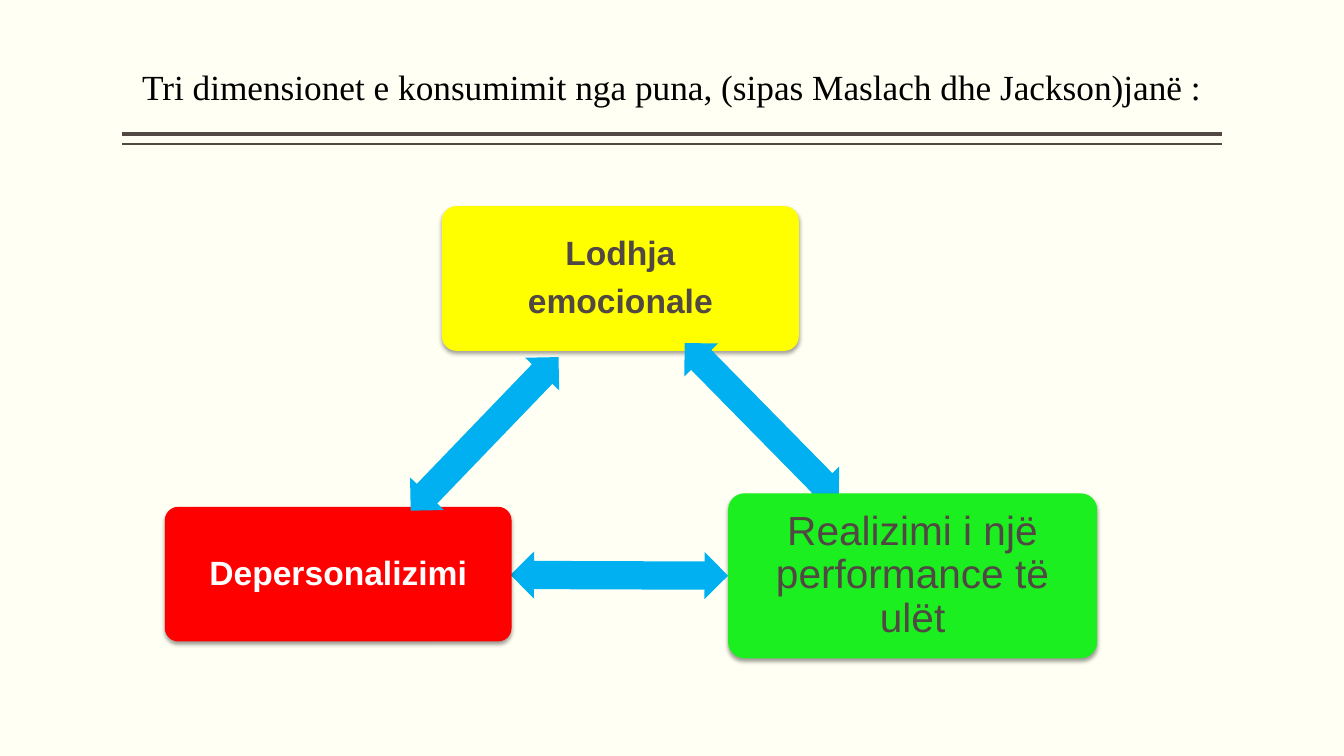
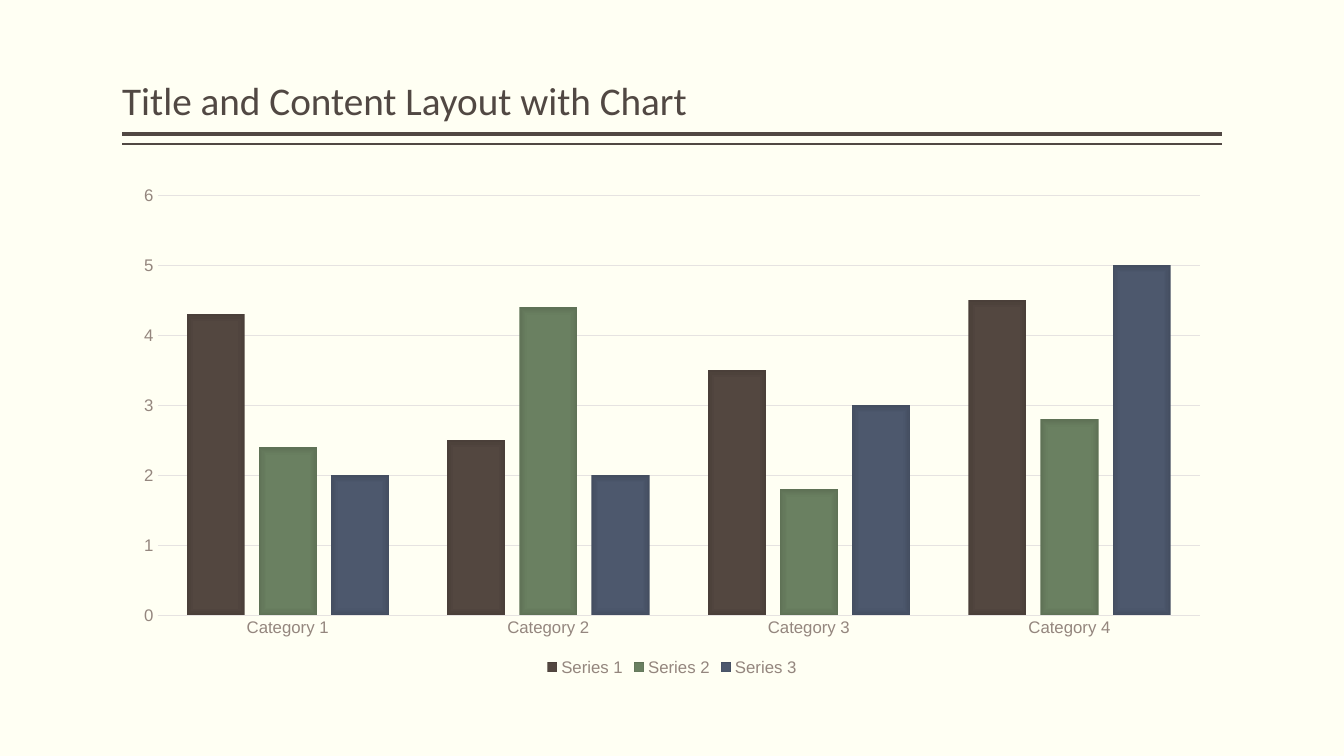
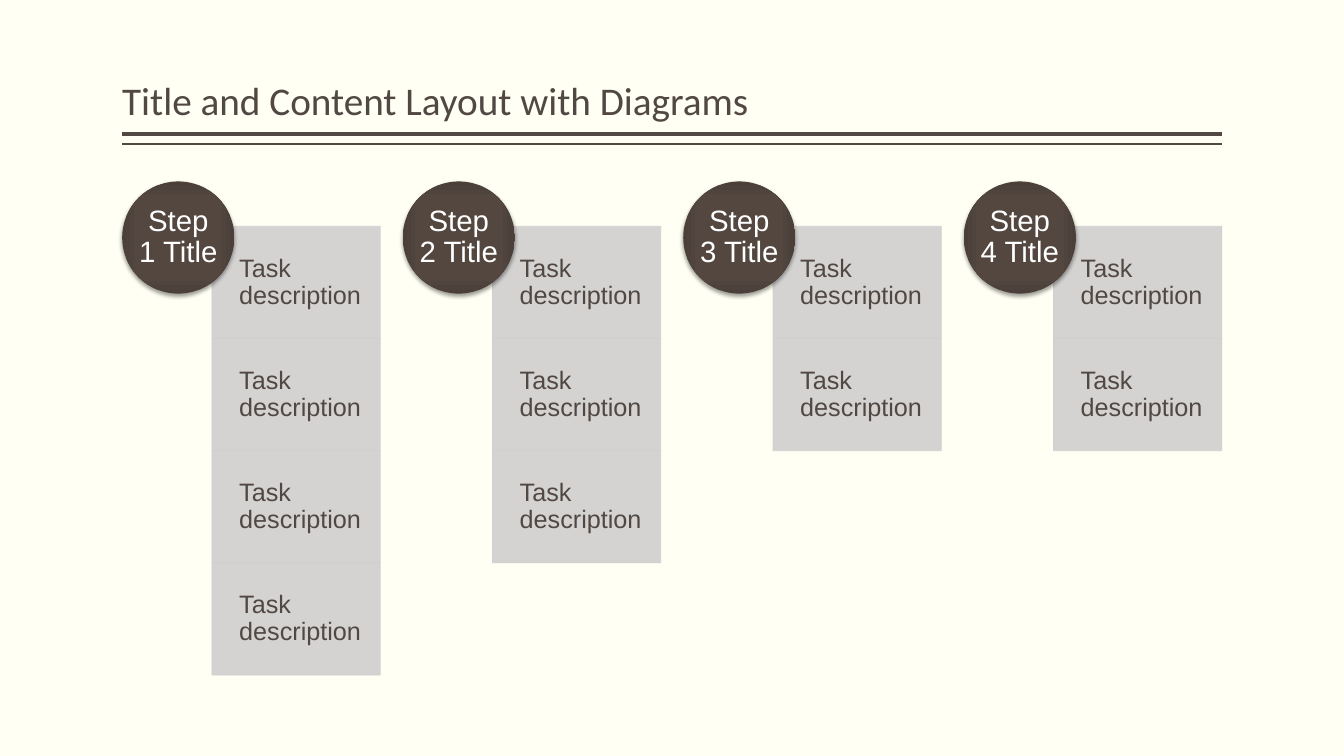
from lxml import etree
from pptx import Presentation, util as u
from pptx.chart.data import CategoryChartData
from pptx.dml.color import RGBColor
from pptx.enum import chart as ch, shapes, text
from pptx.oxml.ns import qn

C = dict(paper="FFFFF3", ink="514843", black="000000", white="FFFFFF",
         yellow="FFFF00", green="1BEF20", red="FF0000", arrow="00B0F0",
         card="D0CFCF", label="94867E", grid="E6E3E1")
C = {name: RGBColor.from_string(value) for name, value in C.items()}
BROWN = ("544740", "534740", "4A3F39")
SAGE = ("6B8162", "6A8061", "5F7256")
NAVY = ("4E596E", "4D586D", "444E61")
W, H = 13.333, 7.5
LEFT, TOP = W / 11, H * 0.24
WIDE = W - 2 * LEFT
UNIT = WIDE / 9.8  # the content grid is 9.8 square cells wide
LEFT_AL, CENTER = text.PP_ALIGN.LEFT, text.PP_ALIGN.CENTER
KIND = shapes.MSO_SHAPE


def shade(fill, element, stops):
    """Fill from the centre to a darker rim."""
    fill.gradient()
    grad = next(element.iter(qn("a:gradFill")))
    for child in list(grad):
        grad.remove(child)
    gs_list = etree.SubElement(grad, qn("a:gsLst"))
    for pos, color in zip((0, 71, 100), stops):
        gs = etree.SubElement(gs_list, qn("a:gs"), pos=str(pos * 1000))
        etree.SubElement(gs, qn("a:srgbClr"), val=color)
    focus = etree.SubElement(grad, qn("a:path"), path="rect")
    etree.SubElement(focus, qn("a:fillToRect"), l="50000", t="50000", r="50000", b="50000")


def add_box(s, kind, cell, fill, lines=(), size=18, color="ink", bold=False,
            align=CENTER, margins=(0, 0, 0, 0), shadow=False):
    """Add a shape at (column, row, columns, rows) of the content grid."""
    x, y, w, h = (u.Inches(n * UNIT) for n in cell)
    sp = s.shapes.add_shape(kind, u.Inches(LEFT) + x, u.Inches(TOP) + y, w, h)
    sp.line.fill.background()
    sp.shadow.inherit = False
    if isinstance(fill, tuple):
        shade(sp.fill, sp.element, fill)
    else:
        sp.fill.solid()
        sp.fill.fore_color.rgb = C[fill]
    if shadow:
        effects = sp.element.spPr.find(qn("a:effectLst"))
        outer = etree.SubElement(effects, qn("a:outerShdw"), blurRad=str(u.Pt(3.1)),
                                 dist=str(u.Pt(2)), dir="5400000", rotWithShape="0")
        tint = etree.SubElement(outer, qn("a:srgbClr"), val="000000")
        etree.SubElement(tint, qn("a:alpha"), val="38000")
    tf = sp.text_frame
    tf.word_wrap = True
    tf.vertical_anchor = text.MSO_ANCHOR.MIDDLE
    tf.margin_left, tf.margin_top, tf.margin_right, tf.margin_bottom = map(u.Inches, margins)
    for i, line in enumerate(lines):
        p = tf.add_paragraph() if i else tf.paragraphs[0]
        p.text = line
        p.alignment, p.line_spacing, p.space_after = align, 0.9, u.Pt(size * 0.35)
        p.font.name, p.font.size, p.font.bold = "Arial", u.Pt(size), bold
        p.font.color.rgb = C[color]
    return sp


prs = Presentation()
prs.slide_width, prs.slide_height = u.Inches(W), u.Inches(H)
prs.slide_master.background.fill.solid()
prs.slide_master.background.fill.fore_color.rgb = C["paper"]

# Shared layout: title place and double rule
layout = prs.slide_layouts.get_by_name("Title Only")
for ph in list(layout.placeholders):
    if ph.placeholder_format.type != shapes.PP_PLACEHOLDER.TITLE:
        ph.element.getparent().remove(ph.element)
        continue
    ph.left, ph.top = u.Inches(LEFT), u.Inches(0.08)
    ph.width, ph.height = u.Inches(WIDE), u.Inches(1.2)
    tf = ph.text_frame
    tf.auto_size = text.MSO_AUTO_SIZE.NONE
    tf.vertical_anchor = text.MSO_ANCHOR.BOTTOM
    tf.margin_left = tf.margin_right = 0
    tf.margin_top = tf.margin_bottom = u.Inches(0.05)

titles = [
    ("Tri dimensionet e konsumimit nga puna, (sipas Maslach dhe Jackson)janë :",
     "Times New Roman", 25.2, "black", CENTER),
    ("Title and Content Layout with Chart", "Calibri", 28, "ink", LEFT_AL),
    ("Title and Content Layout with Diagrams", "Calibri", 28, "ink", LEFT_AL),
]
for title, font, size, color, align in titles:
    s = prs.slides.add_slide(layout)
    p = s.shapes.title.text_frame.paragraphs[0]
    p.text, p.alignment, p.line_spacing = title, align, 0.9
    p.font.name, p.font.size, p.font.color.rgb = font, u.Pt(size), C[color]
burnout, columns, steps = prs.slides

rules = []
for y, weight in ((1.33, 3), (1.43, 1)):
    rule = burnout.shapes.add_connector(shapes.MSO_CONNECTOR.STRAIGHT, u.Inches(LEFT),
                                        u.Inches(y), u.Inches(LEFT + WIDE), u.Inches(y))
    rule.line.color.rgb, rule.line.width = C["ink"], u.Pt(weight)
    etree.SubElement(rule.element.spPr, qn("a:effectLst"))
    rules.append(rule.element)
layout.shapes.element.extend(rules)

# Slide 1: three dimensions joined by arrows
title = burnout.shapes.title
title.left, title.top = u.Inches(LEFT), u.Inches(0.2)
title.width, title.height = u.Inches(WIDE), u.Inches(0.92)
dimensions = [
    ((2.85, 0.22, 3.18, 1.29), "yellow", ["Lodhja", "emocionale"], 24, "ink", True,
     (4.72, 1.93, 1.96, 0.42), 45.5),
    ((5.4, 2.78, 3.29, 1.47), "green", ["Realizimi i një performance të ulët"], 29, "ink", False,
     (3.46, 3.3, 1.94, 0.42), 180.2),
    ((0.38, 2.9, 3.09, 1.2), "red", ["Depersonalizimi"], 24, "white", True,
     (2.28, 2.04, 1.9, 0.42), 313.9),
]
for cell, fill, lines, size, color, bold, arrow_cell, angle in dimensions:
    sp = add_box(burnout, KIND.ROUNDED_RECTANGLE, cell, fill, lines, size, color, bold,
                 margins=(0.1,) * 4, shadow=True)
    sp.adjustments[0] = 0.1
    arrow = add_box(burnout, KIND.LEFT_RIGHT_ARROW, arrow_cell, "arrow")
    arrow.adjustments[0], arrow.adjustments[1] = 0.6, 0.5
    arrow.rotation = angle

# Slide 2: column chart
data = CategoryChartData()
data.categories = [f"Category {n}" for n in range(1, 5)]
for n, values in enumerate([(4.3, 2.5, 3.5, 4.5), (2.4, 4.4, 1.8, 2.8), (2, 2, 3, 5)], 1):
    data.add_series(f"Series {n}", values)
chart = columns.shapes.add_chart(ch.XL_CHART_TYPE.COLUMN_CLUSTERED, u.Inches(LEFT), u.Inches(1.75),
                                 u.Inches(WIDE), u.Inches(H * 2 / 3), data).chart
chart.has_title = False
chart.font.name, chart.font.size, chart.font.color.rgb = "Arial", u.Pt(12), C["label"]
chart.has_legend = True
chart.legend.position = ch.XL_LEGEND_POSITION.BOTTOM
chart.legend.include_in_layout = False
plot = chart.plots[0]
plot.gap_width, plot.overlap, plot.vary_by_categories = 100, -24, False
for series, stops in zip(plot.series, (BROWN, SAGE, NAVY)):
    shade(series.format.fill, series._element, stops)
for axis in (chart.category_axis, chart.value_axis):
    axis.major_tick_mark = axis.minor_tick_mark = ch.XL_TICK_MARK.NONE
chart.category_axis.format.line.color.rgb = C["grid"]
chart.category_axis.format.line.width = u.Pt(1)
axis = chart.value_axis
axis.minimum_scale, axis.maximum_scale, axis.major_unit = 0, 6, 1
axis.format.line.fill.background()
axis.major_gridlines.format.line.color.rgb = C["grid"]
axis.major_gridlines.format.line.width = u.Pt(0.75)

# Slide 3: steps, each with a stack of tasks
for i, tasks in enumerate((4, 3, 2, 2)):
    col = i * 2.5
    for row in range(tasks):
        card = add_box(steps, KIND.RECTANGLE, (col + 0.8, row + 0.4, 1.5, 1), "card",
                       ["Task description"], align=LEFT_AL, margins=(0.27, 0.14, 0.14, 0.14))
        card.line.color.rgb, card.line.width = C["card"], u.Pt(0.5)
        for tint in card.element.spPr.iter(qn("a:srgbClr")):
            etree.SubElement(tint, qn("a:alpha"), val="90000")
    add_box(steps, KIND.OVAL, (col, 0, 1, 1), BROWN, [f"Step {i + 1} Title"], 21, "white",
            shadow=True)

prs.save("out.pptx")
